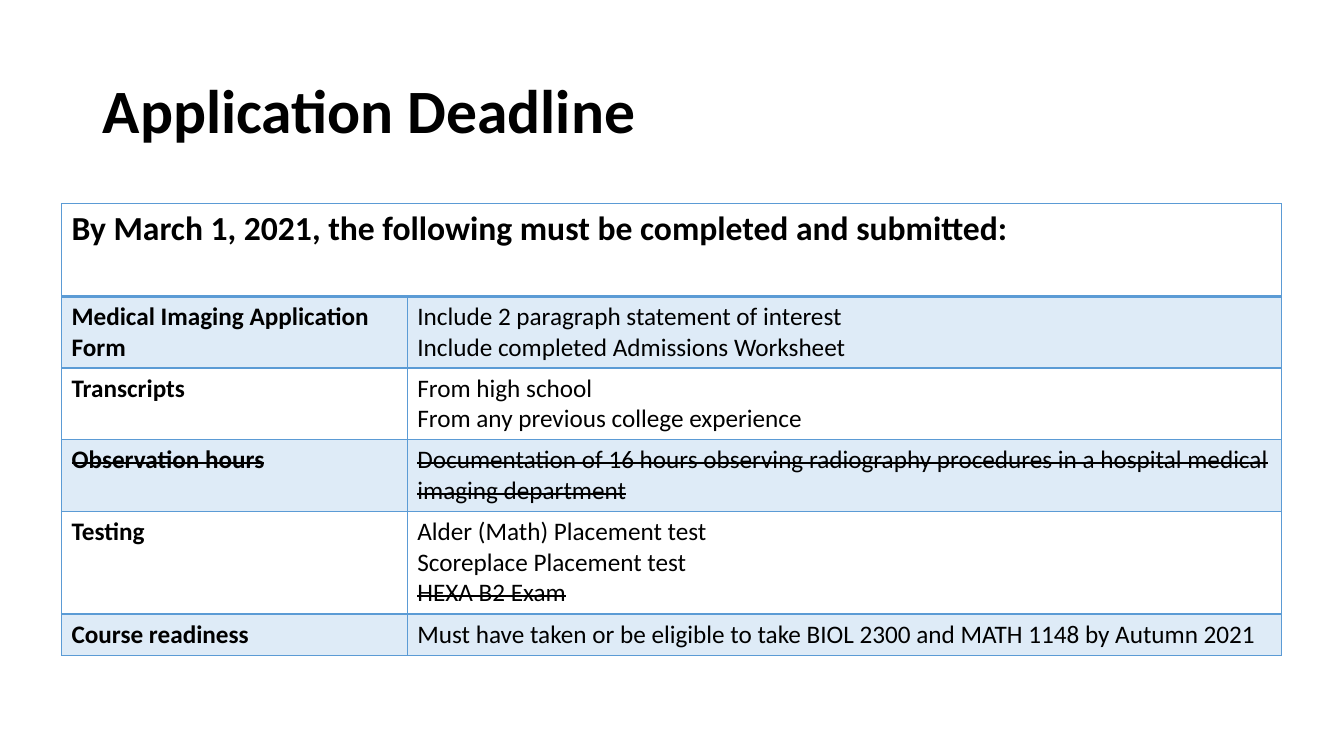
from pptx import Presentation
from pptx.dml.color import RGBColor
from pptx.enum.text import MSO_ANCHOR, MSO_AUTO_SIZE, PP_ALIGN
from pptx.oxml import parse_xml
from pptx.oxml.ns import nsdecls
from pptx.util import Inches, Pt

BLUE, PALE, BLACK = "5B9BD5", "DEEBF7", "000000"


def add_run(p, text, size, bold, strike=False):
    r = p.add_run()
    r.text = text
    r.font.name, r.font.size, r.font.bold = "Calibri", Pt(size), bold
    r.font.color.rgb = RGBColor.from_string(BLACK)
    if strike:
        r._r.get_or_add_rPr().set("strike", "sngStrike")


def set_borders(cell, top, bottom):
    tcPr = cell._tc.get_or_add_tcPr()
    widths = {"L": 1, "R": 1, "T": top, "B": bottom}
    for i, (side, width) in enumerate(widths.items()):
        tcPr.insert(i, parse_xml(
            f'<a:ln{side} {nsdecls("a")} w="{Pt(width)}"><a:solidFill>'
            f'<a:srgbClr val="{BLUE}"/></a:solidFill></a:ln{side}>'))


prs = Presentation()
prs.slide_width, prs.slide_height = Inches(13.33), Inches(7.5)
s = prs.slides.add_slide(prs.slide_layouts[5])

# Title
title = s.shapes.title
title.left, title.top = Inches(0.92), Inches(0.4)
title.width, title.height = Inches(11.5), Inches(1.45)
tf = title.text_frame
tf.auto_size = MSO_AUTO_SIZE.NONE
tf.vertical_anchor = MSO_ANCHOR.MIDDLE
p = tf.paragraphs[0]
p.alignment, p.line_spacing = PP_ALIGN.LEFT, 0.9
add_run(p, "Application Deadline", 44, True)

# Requirements: row height, label, details; dropped items are struck through
heading = "By March 1, 2021, the following must be completed and submitted:"
dropped = {
    "Observation hours",
    "Documentation of 16 hours observing radiography procedures in a hospital medical imaging department",
    "HEXA B2 Exam",
}
rows = [
    (0.92, heading, []),
    (0.71, "Medical Imaging Application Form",
     ["Include 2 paragraph statement of interest", "Include completed Admissions Worksheet"]),
    (0.71, "Transcripts", ["From high school", "From any previous college experience"]),
    (0.71, "Observation hours",
     ["Documentation of 16 hours observing radiography procedures in a hospital medical imaging department"]),
    (1.02, "Testing",
     ["Alder (Math) Placement test", "Scoreplace Placement test", "HEXA B2 Exam"]),
    (0.41, "Course readiness",
     ["Must have taken or be eligible to take BIOL 2300 and MATH 1148 by Autumn 2021"]),
]

# Table
height = sum(row[0] for row in rows)
table = s.shapes.add_table(len(rows), 2, Inches(0.61), Inches(2.02),
                           Inches(12.1), Inches(height)).table
table.first_row = table.horz_banding = False
table.columns[0].width, table.columns[1].width = Inches(3.43), Inches(8.67)
table.cell(0, 0).merge(table.cell(0, 1))

for i, (row_height, label, details) in enumerate(rows):
    table.rows[i].height = Inches(row_height)
    for j, lines in enumerate([[label], details]):
        cell = table.cell(i, j)
        if i % 2:
            cell.fill.solid()
            cell.fill.fore_color.rgb = RGBColor.from_string(PALE)
        else:
            cell.fill.background()
        set_borders(cell, top=2 if i == 1 else 1, bottom=2 if i == 0 else 1)
        tf = cell.text_frame
        for k, line in enumerate(lines):
            p = tf.add_paragraph() if k else tf.paragraphs[0]
            add_run(p, line, 18 if i else 24, j == 0, line in dropped)

prs.save("out.pptx")
